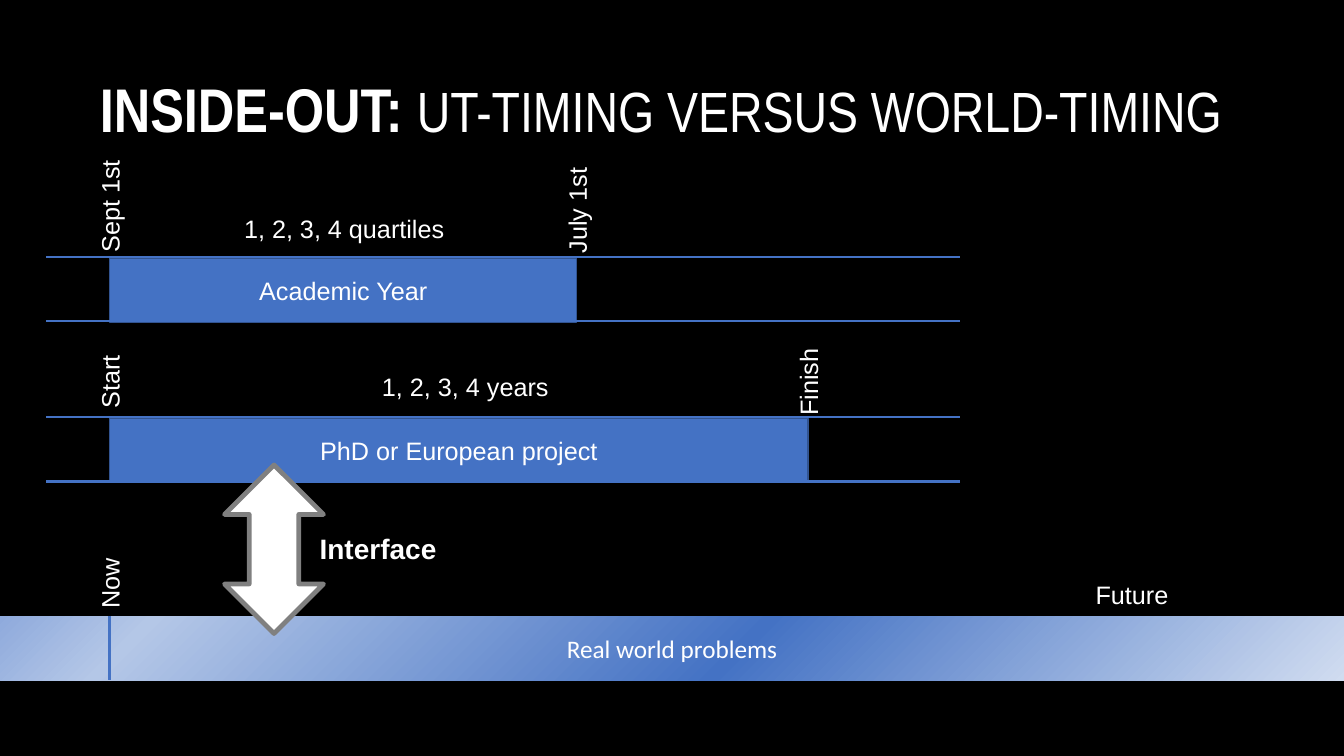
from dataclasses import dataclass
from lxml.etree import SubElement
from pptx import Presentation
from pptx.dml.color import RGBColor as RGB
from pptx.enum.shapes import MSO_CONNECTOR as Link, MSO_SHAPE as Shape
from pptx.enum.text import MSO_ANCHOR as Anchor, MSO_AUTO_SIZE as Fit, PP_ALIGN as Align
from pptx.oxml import parse_xml
from pptx.oxml.ns import nsdecls, qn
from pptx.util import Inches, Pt


@dataclass(frozen=True)
class Theme:
    back: str = "000000"
    text: str = "FFFFFF"
    blue: str = "4472C4"
    edge: str = "325491"
    gray: str = "808080"
    fade: tuple = ((0, "D0DCF0"), (45, "4472C4"), (89, "B4C7E7"), (100, "8FAADC"))
    sans: str = "Arial"
    slim: str = "Arial Narrow"
    body: str = "Calibri"
    lead: float = 58.7
    head: float = 54
    size: float = 24
    big: float = 26.7
    rule: float = 2.25


THEME = Theme()
COLS, ROWS = 17.78, 10
LEFT, RIGHT = 0.61, 12.7
START = 1.45
BAND = 0.85
WORLD = 8.15


def cells(*counts):
    return [Inches(n) for n in counts]


def style(font, name, size, bold=False):
    font.name, font.size, font.bold = name, Pt(size), bold
    font.color.rgb = RGB.from_string(THEME.text)


def title(slide, lead, rest):
    box = slide.shapes.title
    box.left, box.top, box.width, box.height = cells(1.22, 0.53, 15.33, 1.93)
    frame = box.text_frame
    frame.word_wrap, frame.auto_size = True, Fit.NONE
    frame.vertical_anchor = Anchor.MIDDLE
    para = frame.paragraphs[0]
    para.alignment, para.line_spacing = Align.LEFT, 0.9
    for text, size, bold in ((lead, THEME.lead, True), (rest, THEME.head, False)):
        run = para.add_run()
        run.text = text
        style(run.font, THEME.slim, size, bold)


def label(shapes, text, mid, width, height=0.5, turn=0, size=THEME.size, bold=False, wrap=False):
    x, y = mid
    box = shapes.add_textbox(*cells(x - width / 2, y - height / 2, width, height))
    box.rotation = turn
    frame = box.text_frame
    frame.word_wrap, frame.auto_size = wrap, Fit.SHAPE_TO_FIT_TEXT
    para = frame.paragraphs[0]
    para.text = text
    style(para.font, THEME.sans, size, bold)


def block(shapes, kind, area, fill, edge=None, weight=1):
    item = shapes.add_shape(kind, *cells(*area))
    item.shadow.inherit = False
    item.fill.solid()
    item.fill.fore_color.rgb = RGB.from_string(fill)
    if edge:
        item.line.color.rgb = RGB.from_string(edge)
        item.line.width = Pt(weight)
    else:
        item.line.fill.background()
    return item


def bar(shapes, text, area, edge=None, face=THEME.sans):
    item = block(shapes, Shape.RECTANGLE, area, THEME.blue, edge)
    frame = item.text_frame
    frame.vertical_anchor = Anchor.MIDDLE
    para = frame.paragraphs[0]
    para.text, para.alignment = text, Align.CENTER
    style(para.font, face, THEME.size)
    return item


def blend(item, stops):
    marks = "".join(
        f'<a:gs pos="{pos * 1000}"><a:srgbClr val="{tone}"/></a:gs>' for pos, tone in stops)
    fill = parse_xml(
        f'<a:gradFill {nsdecls("a")} rotWithShape="1"><a:gsLst>{marks}</a:gsLst>'
        '<a:path path="circle"><a:fillToRect l="100000" t="100000"/></a:path></a:gradFill>')
    props = item._element.spPr
    props.replace(props.find(qn("a:solidFill")), fill)


def rule(shapes, *ends):
    line = shapes.add_connector(Link.STRAIGHT, *cells(*ends))
    line.line.color.rgb = RGB.from_string(THEME.blue)
    line.line.width = Pt(THEME.rule)
    SubElement(line._element.spPr, qn("a:effectLst"))


def lane(shapes, top, width, name, note, marks):
    bar(shapes, name, (START, top + 0.02, width, 0.84), THEME.edge)
    for y in (top, top + BAND):
        rule(shapes, LEFT, y, RIGHT, y)
    for x, (text, y, length) in zip((START, START + width), marks):
        label(shapes, text, (x, y), length, turn=270)
    text, mid, length = note
    label(shapes, text, mid, length)


def world(shapes):
    item = bar(shapes, "Real world problems", (0, WORLD, COLS, BAND), face=THEME.body)
    blend(item, THEME.fade)
    label(shapes, "Now", (START, 7.65), 1, turn=270, wrap=True)
    label(shapes, "Future", (14.98, 7.86), 1.17)
    rule(shapes, START, WORLD, START, WORLD + BAND)


def bridge(shapes):
    group = shapes.add_group_shape().shapes
    block(group, Shape.UP_DOWN_ARROW, (2.97, 6.15, 1.31, 2.23), THEME.text, THEME.gray, 4.5)
    label(group, "Interface", (5.01, 7.26), 1.76, 0.55, size=THEME.big, bold=True)


def main():
    deck = Presentation()
    deck.slide_width, deck.slide_height = cells(COLS, ROWS)
    slide = deck.slides.add_slide(deck.slide_layouts[5])
    back = slide.background.fill
    back.solid()
    back.fore_color.rgb = RGB.from_string(THEME.back)
    shapes = slide.shapes
    title(slide, "INSIDE-OUT: ", "UT-TIMING VERSUS WORLD-TIMING")
    lane(shapes, 3.4, 6.18, "Academic Year",
         ("1, 2, 3, 4 quartiles", (4.57, 3.02), 2.88),
         (("Sept 1st", 2.72, 1.44), ("July 1st", 2.78, 1.34)))
    lane(shapes, 5.52, 9.24, "PhD or European project",
         ("1, 2, 3, 4 years", (6.17, 5.11), 2.43),
         (("Start", 5.05, 0.91), ("Finish", 5.05, 1.1)))
    world(shapes)
    bridge(shapes)
    deck.save("out.pptx")


if __name__ == "__main__":
    main()
